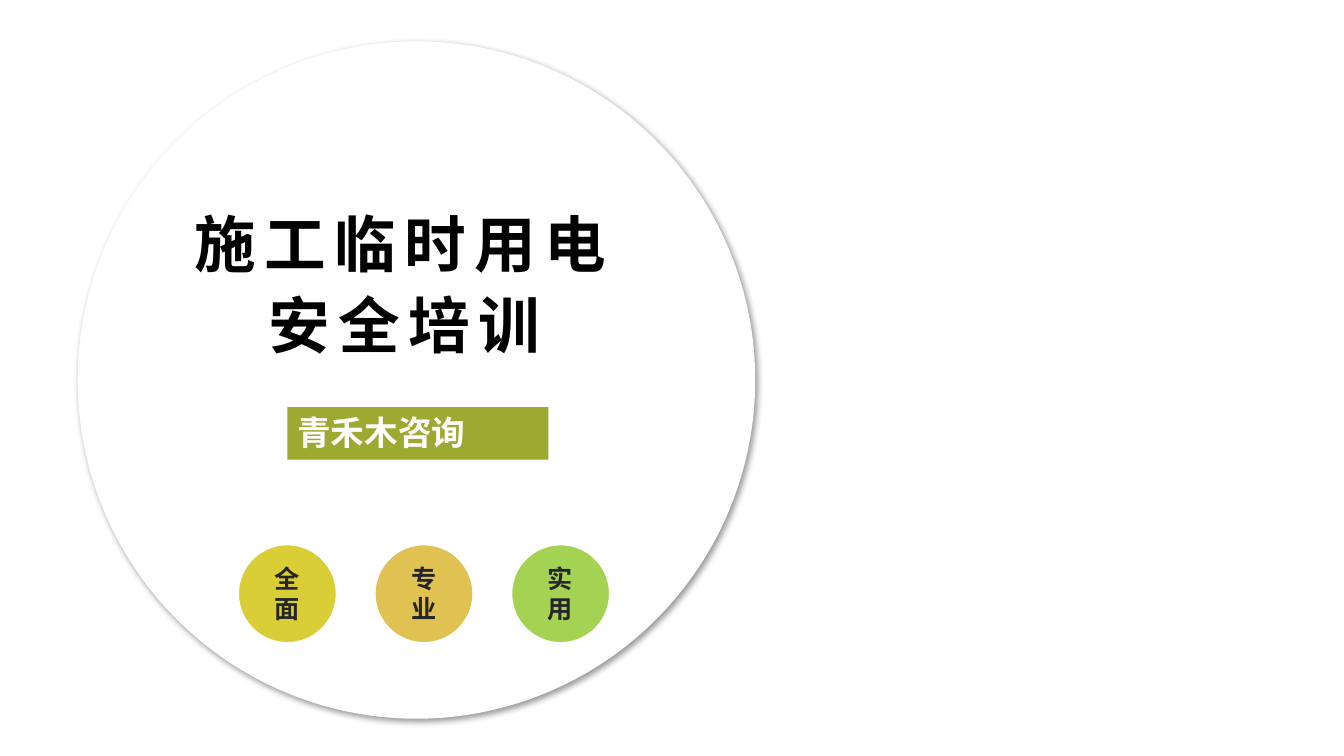
from lxml import etree
from pptx import Presentation
from pptx.dml.color import RGBColor
from pptx.enum import shapes, text
from pptx.oxml import parse_xml
from pptx.oxml.ns import nsdecls, qn
from pptx.util import Inches, Pt

# Content
TITLE = "施工临时用电\v安全培训"
BANNER = "青禾木咨询"
BLACK = RGBColor(0x00, 0x00, 0x00)
DARK = RGBColor(0x26, 0x26, 0x26)
WHITE = RGBColor(0xFF, 0xFF, 0xFF)
OLIVE = RGBColor(0x9E, 0xA9, 0x32)
BADGES = [
    ("全面", RGBColor(0xDA, 0xCE, 0x36)),
    ("专业", RGBColor(0xE0, 0xC2, 0x52)),
    ("实用", RGBColor(0xA4, 0xD2, 0x52)),
]

# Layout in inches: left, top, width, height
DISC_AT = (0.77, 0.41, 6.72, 6.72)
TITLE_AT = (0.53, 1.83, 6.96, 1.75)
BANNER_AT = (2.85, 4.04, 2.59, 0.52)
BADGE_LEFT, BADGE_TOP, BADGE_SIZE, BADGE_STEP = 2.36, 5.4, 0.98, 1.355

SHADOW = f"""<a:effectLst {nsdecls('a')}>
<a:outerShdw blurRad="{Pt(4)}" dist="{Pt(3)}" dir="2700000" algn="tl" rotWithShape="0">
<a:srgbClr val="000000"><a:alpha val="40000"/></a:srgbClr>
</a:outerShdw></a:effectLst>"""


def add_figure(page, kind, place, fill):
    figure = page.shapes.add_shape(kind, *map(Inches, place))
    figure.shadow.inherit = False
    figure.fill.solid()
    figure.fill.fore_color.rgb = fill
    figure.line.fill.background()
    return figure


def write(box, words, face, size, color, align, anchor, spacing=0):
    frame = box.text_frame
    frame.word_wrap = True
    frame.vertical_anchor = anchor
    para = frame.paragraphs[0]
    para.text = words
    para.alignment = align
    for span in para.runs:
        span.font.color.rgb = color
        for name, value in {"name": face, "size": Pt(size), "bold": True}.items():
            setattr(span.font, name, value)
        props = span.font._element
        if spacing:
            props.set("spc", str(spacing * 100))
        east_asian = etree.Element(qn("a:ea"), typeface=face)
        props.find(qn("a:latin")).addnext(east_asian)
    return para


deck = Presentation()
deck.slide_width, deck.slide_height = Inches(13.33), Inches(7.5)
page = deck.slides.add_slide(deck.slide_layouts[0])
subtitle = page.placeholders[1].element
subtitle.getparent().remove(subtitle)

# White disc with a soft shadow, behind the title
disc = add_figure(page, shapes.MSO_SHAPE.OVAL, DISC_AT, WHITE)
properties = disc.element.spPr
properties.replace(properties.find(qn("a:effectLst")), parse_xml(SHADOW))
page.shapes.title.element.addprevious(disc.element)

# Title
title = page.shapes.title
title.left, title.top, title.width, title.height = map(Inches, TITLE_AT)
title_para = write(title, TITLE, "Noto Sans CJK JP", 44, BLACK,
                   text.PP_ALIGN.CENTER, text.MSO_ANCHOR.BOTTOM, spacing=6)
title_para.line_spacing = 1.1
title.text_frame.margin_bottom = 0
title.text_frame.auto_size = text.MSO_AUTO_SIZE.NONE

# Banner
banner = add_figure(page, shapes.MSO_SHAPE.RECTANGLE, BANNER_AT, OLIVE)
write(banner, BANNER, "Noto Sans CJK SC", 24, WHITE,
      text.PP_ALIGN.JUSTIFY, text.MSO_ANCHOR.TOP)

# Row of round badges
for column, (label, fill) in enumerate(BADGES):
    place = (BADGE_LEFT + column * BADGE_STEP, BADGE_TOP, BADGE_SIZE, BADGE_SIZE)
    badge = add_figure(page, shapes.MSO_SHAPE.OVAL, place, fill)
    badge.line.color.rgb = WHITE
    badge.line.width = Pt(1.5)
    write(badge, label, "Arial", 18, DARK,
          text.PP_ALIGN.CENTER, text.MSO_ANCHOR.MIDDLE)

deck.save("out.pptx")
